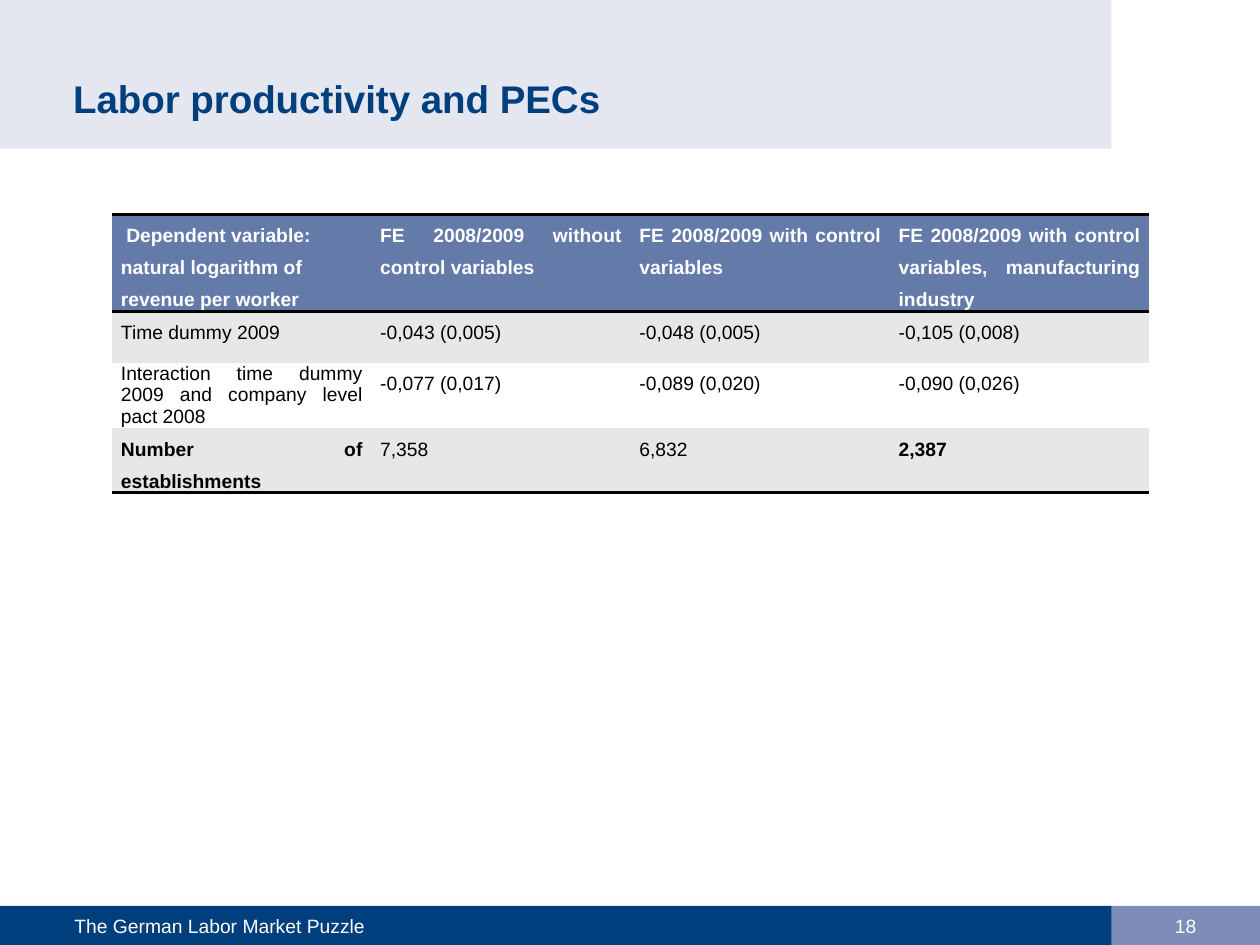
from pptx import Presentation
from pptx.dml.color import RGBColor
from pptx.enum.shapes import MSO_SHAPE
from pptx.enum.text import MSO_ANCHOR, MSO_AUTO_SIZE, PP_ALIGN
from pptx.oxml import parse_xml
from pptx.oxml.ns import nsdecls
from pptx.util import Inches, Pt

NAVY, PERIWINKLE, PALE = "003F7D", "7D8DB7", "E4E6F0"
HEADER, GREY, WHITE, BLACK = "647AA9", "E7E7E7", "FFFFFF", "000000"

ROWS = [
    [" Dependent variable: natural logarithm of revenue per worker",
     "FE 2008/2009 without control variables",
     "FE 2008/2009 with control variables",
     "FE 2008/2009 with control variables, manufacturing industry"],
    ["Time dummy 2009", "-0,043 (0,005)", "-0,048 (0,005)", "-0,105 (0,008)"],
    ["Interaction time dummy 2009 and company level pact 2008",
     "-0,077 (0,017)", "-0,089 (0,020)", "-0,090 (0,026)"],
    ["Number of establishments", "7,358", "6,832", "2,387"],
]
ROW_HEIGHTS = [0.77, 0.41, 0.52, 0.5]
ROW_FILLS = [HEADER, GREY, WHITE, GREY]


def rgb(color):
    """Turn a hex string into a colour."""
    return RGBColor.from_string(color)


def paint(target, color):
    """Give a shape or a cell a solid fill."""
    target.fill.solid()
    target.fill.fore_color.rgb = rgb(color)


def set_text(tf, text, size, color, bold=False, align=PP_ALIGN.LEFT):
    """Write one paragraph in Arial and return it."""
    tf.text = text
    tf.word_wrap = True
    p = tf.paragraphs[0]
    p.alignment = align
    font = p.runs[0].font
    font.name, font.size, font.bold = "Arial", Pt(size), bold
    font.color.rgb = rgb(color)
    return p


def add_title(s, text):
    """Fill the title placeholder as the header band."""
    sp = s.shapes.title
    sp.left, sp.top = Inches(-0.01), Inches(0)
    sp.width, sp.height = Inches(8.83), Inches(1.18)
    paint(sp, PALE)
    tf = sp.text_frame
    tf.auto_size = MSO_AUTO_SIZE.NONE
    tf.vertical_anchor = MSO_ANCHOR.BOTTOM
    tf.margin_left, tf.margin_right = Inches(0.59), Inches(0.39)
    tf.margin_top, tf.margin_bottom = Inches(0.12), Inches(0.22)
    set_text(tf, text, 22, NAVY, bold=True)


def add_footer(s, left, width, color, text, align, inset=0.1):
    """Add one labelled block of the footer band."""
    sp = s.shapes.add_shape(MSO_SHAPE.RECTANGLE, Inches(left), Inches(7.19),
                            Inches(width), Inches(0.31))
    sp.shadow.inherit = False
    sp.line.fill.background()
    paint(sp, color)
    tf = sp.text_frame
    tf.margin_left = Inches(inset)
    tf.vertical_anchor = MSO_ANCHOR.MIDDLE
    set_text(tf, text, 11, WHITE, align=align)


def set_borders(cell, ruled):
    """Draw 2 pt rules on the named sides and clear the others."""
    tcPr = cell._tc.get_or_add_tcPr()
    for i, side in enumerate(("lnL", "lnR", "lnT", "lnB")):
        fill = (f'<a:solidFill><a:srgbClr val="{BLACK}"/></a:solidFill>'
                if side in ruled else "<a:noFill/>")
        tcPr.insert(i, parse_xml(
            f'<a:{side} {nsdecls("a")} w="{Pt(2)}">{fill}</a:{side}>'))


def format_cell(cell, text, row, col):
    """Write and style one table cell."""
    last = len(ROWS) - 1
    header = row == 0
    cell.margin_left = cell.margin_right = Inches(0.07)
    cell.margin_top = cell.margin_bottom = 0
    bold = header or (row == last and col in (0, 3))
    align = PP_ALIGN.LEFT if header and col == 0 else PP_ALIGN.JUSTIFY
    p = set_text(cell.text_frame, text, 11, WHITE if header else BLACK, bold, align)
    p.line_spacing = 1.0 if (row, col) == (2, 0) else 1.5
    paint(cell, ROW_FILLS[row])
    ruled = {0: ("lnT", "lnB"), 1: ("lnT",), last: ("lnB",)}
    set_borders(cell, ruled.get(row, ()))


def add_results(s):
    """Add the table of estimates."""
    table = s.shapes.add_table(len(ROWS), len(ROWS[0]), Inches(0.89), Inches(1.7),
                               Inches(8.23), Inches(sum(ROW_HEIGHTS))).table
    for row, (texts, height) in enumerate(zip(ROWS, ROW_HEIGHTS)):
        table.rows[row].height = Inches(height)
        for col, text in enumerate(texts):
            format_cell(table.cell(row, col), text, row, col)


def main():
    """Build the slide and save it."""
    prs = Presentation()
    prs.slide_width, prs.slide_height = Inches(10), Inches(7.5)
    s = prs.slides.add_slide(prs.slide_layouts[5])
    add_title(s, "Labor productivity and PECs")
    add_footer(s, 0, 8.83, NAVY, "The German Labor Market Puzzle", PP_ALIGN.LEFT, 0.59)
    add_footer(s, 8.82, 1.18, PERIWINKLE, "18", PP_ALIGN.CENTER)
    add_results(s)
    prs.save("out.pptx")


if __name__ == "__main__":
    main()
